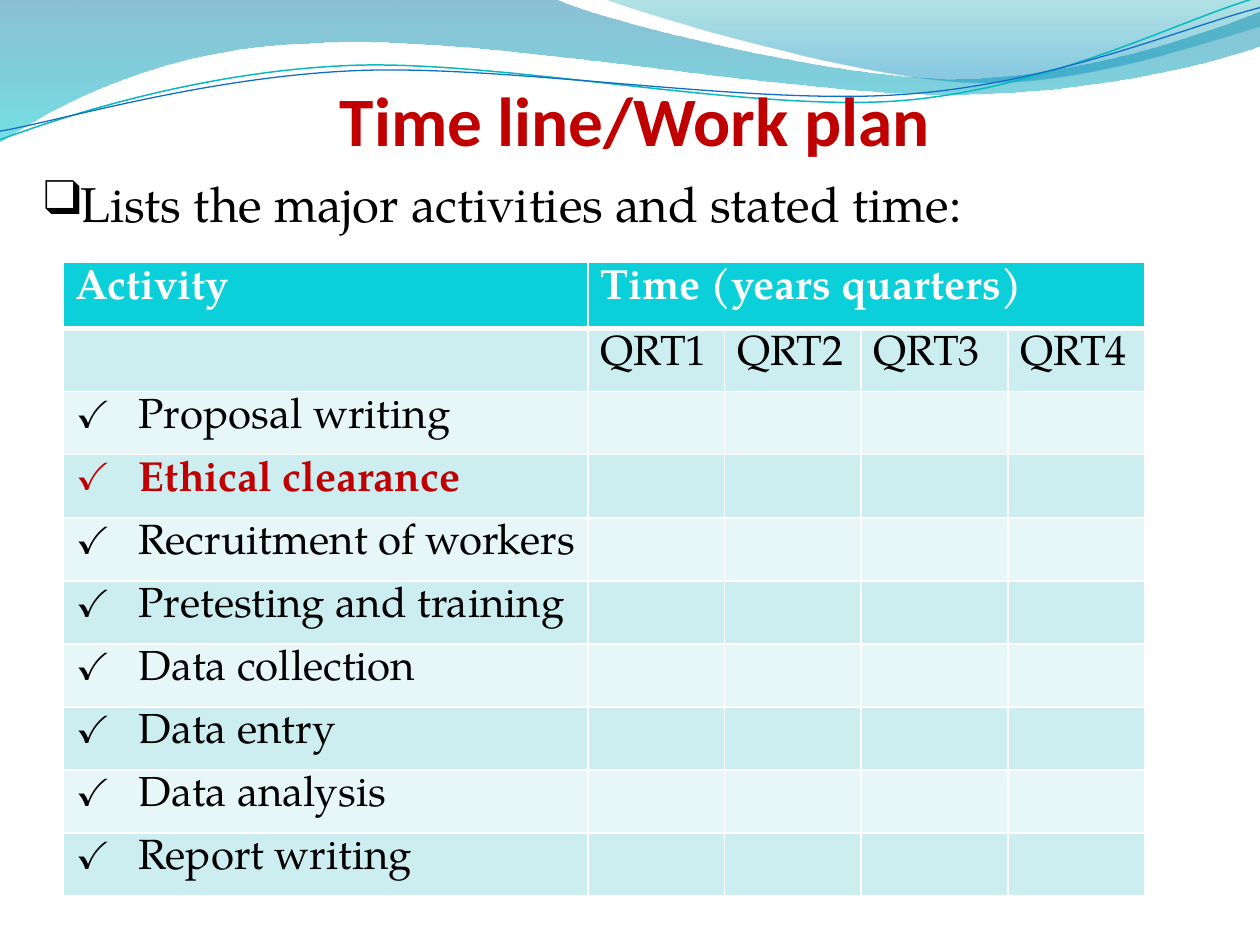
from lxml.etree import SubElement
from pptx import Presentation
from pptx.dml.color import RGBColor
from pptx.enum.text import MSO_ANCHOR, MSO_AUTO_SIZE, PP_ALIGN
from pptx.oxml import parse_xml
from pptx.oxml.ns import nsdecls, qn
from pptx.util import Pt

COLORS = {
    "title": "C00000", "text": "000000", "white": "FFFFFF",
    "header": "0BD0D9", "dark_band": "CCEEF1", "light_band": "E7F7F8",
    "teal_line": "0AB8BF", "blue_line": "0F6FC6",
    "wave_blue": "0074A1", "wave_cyan": "00C6CF",
    "crest_teal": "00A1A9", "crest_blue": "008BBF",
}
COLORS = {name: RGBColor.from_string(value) for name, value in COLORS.items()}
SERIF = "TeX Gyre Pagella"

WAVES = [
    {"start": (-0.5, -0.5),
     "steps": [(317, -0.7), (343, 12, 478, 45, 546, 45), (614, 45, 690, 19, 720, 6.5),
               (720.7, 26), (708, 32, 626, 55, 537, 54), (448, 54, 275, 20, 185, 24.5),
               (93, 26, 33, 60, -0.7, 81.4)],
     "stops": [(0, "wave_blue", 45), (1, "wave_cyan", 55)]},
    {"start": (345, -0.7),
     "steps": [(366, 8, 491, 44.6, 554, 46.8), (616, 49.7, 692, 23, 720, 15), (720, 0)],
     "stops": [(0, "crest_teal", 30), (0.8, "crest_blue", 45)]},
    {"start": (-1.4, 62.9),
     "steps": [(33.7, 51.7, 114, 29.4, 199.8, 29.9), (284.8, 30.3, 425.8, 67.2, 512.4, 64.9),
               (599, 62.4, 676.4, 25.7, 720.2, 15.6)],
     "line": ("teal_line", 0.85)},
    {"start": (-1.2, 58),
     "steps": [(33, 53.8, 118.3, 32.5, 204, 33), (290.5, 33.5, 428.9, 63.8, 515.5, 61.3),
               (601.3, 59.6, 678.5, 30.1, 721.4, 21.4)],
     "line": ("blue_line", 0.75)},
]


def draw_curve(shapes, start, steps, closed):
    points = [start] + [pair for step in steps for pair in zip(step[::2], step[1::2])]
    points = [(round(x * 100), round(y * 100)) for x, y in points]
    builder = shapes.build_freeform(*points[0], scale=Pt(0.01))
    builder.add_line_segments(points[1:], close=closed)
    shape = builder.convert_to_shape()
    segments = iter(list(shape._element.iter(qn("a:lnTo"))))
    for step in steps:
        first = next(segments)
        if len(step) == 6:
            first.tag = qn("a:cubicBezTo")
            for _ in range(2):
                segment = next(segments)
                first.append(segment[0])
                segment.getparent().remove(segment)
    return shape


def write(paragraph, text, format_values, color, bullet=None, indent=0):
    run = paragraph.add_run()
    run.text = text
    for name, value in format_values.items():
        setattr(run.font, name, value)
    run.font.color.rgb = COLORS[color]
    if bullet:
        properties = paragraph._p.get_or_add_pPr()
        properties.set("marL", str(Pt(indent)))
        properties.set("indent", str(-Pt(indent)))
        SubElement(properties, qn("a:buFont")).set("typeface", SERIF)
        SubElement(properties, qn("a:buChar")).set("char", bullet)


presentation = Presentation()
presentation.slide_width, presentation.slide_height = Pt(720), Pt(540)
slide = presentation.slides.add_slide(presentation.slide_layouts[5])

for wave in WAVES:
    shape = draw_curve(slide.shapes, wave["start"], wave["steps"], "stops" in wave)
    shape.shadow.inherit = False
    if "line" in wave:
        color, width = wave["line"]
        shape.rotation = 357.3
        shape.fill.background()
        shape.line.color.rgb = COLORS[color]
        shape.line.width = Pt(width)
        continue
    shape.line.fill.background()
    shape.fill.gradient()
    shape.fill.gradient_angle = 270
    for stop, (position, color, opacity) in zip(shape.fill.gradient_stops, wave["stops"]):
        stop.position = position
        stop.color.rgb = COLORS[color]
        color_element = stop._gs.find(qn("a:srgbClr"))
        SubElement(color_element, qn("a:alpha")).set("val", str(opacity * 1000))

title = slide.shapes.title
title_box = {"left": Pt(36), "top": Pt(55.4), "width": Pt(653.8), "height": Pt(90)}
title_frame = {"auto_size": MSO_AUTO_SIZE.NONE, "vertical_anchor": MSO_ANCHOR.BOTTOM,
               "margin_left": 0, "margin_right": 0, "margin_top": 0, "margin_bottom": Pt(54)}
for target, format_values in ((title, title_box), (title.text_frame, title_frame)):
    for name, value in format_values.items():
        setattr(target, name, value)
paragraph = title.text_frame.paragraphs[0]
paragraph.alignment = PP_ALIGN.CENTER
write(paragraph, "Time line/Work plan", {"size": Pt(39.6), "name": "Calibri", "bold": True}, "title")
slide.shapes._spTree.append(title._element)

intro = slide.shapes.add_textbox(Pt(18), Pt(95.8), Pt(671.8), Pt(414.7))
intro.text_frame.word_wrap = True
write(intro.text_frame.paragraphs[0], "Lists the major activities and stated time:",
      {"size": Pt(28), "name": SERIF}, "text", bullet="❑")

activities = ["Proposal writing", "Ethical clearance", "Recruitment of workers",
              "Pretesting and training", "Data collection", "Data entry",
              "Data analysis", "Report writing"]
rows = [["Activity", "Time (years quarters)"], ["", "QRT1", "QRT2", "QRT3", "QRT4"]]
rows += [[activity] for activity in activities]
column_widths = [300, 78, 78, 84, 78]
row_heights = [37.8] + [36] * (len(rows) - 1)

table = slide.shapes.add_table(len(rows), len(column_widths), Pt(36), Pt(150),
                               Pt(sum(column_widths)), Pt(sum(row_heights))).table
for column, width in zip(table.columns, column_widths):
    column.width = Pt(width)
for row, height in zip(table.rows, row_heights):
    row.height = Pt(height)
table.cell(0, 1).merge(table.cell(0, 4))

for row_index, texts in enumerate(rows):
    is_header = row_index == 0
    band = "header" if is_header else "dark_band" if row_index % 2 else "light_band"
    for column_index, cell in enumerate(table.rows[row_index].cells):
        cell.fill.solid()
        cell.fill.fore_color.rgb = COLORS[band]
        for position, side in enumerate(("lnL", "lnR", "lnT", "lnB")):
            thick = (is_header and side == "lnB") or (row_index == 1 and side == "lnT")
            cell._tc.get_or_add_tcPr().insert(position, parse_xml(
                f'<a:{side} {nsdecls("a")} w="{Pt(3 if thick else 1)}"><a:solidFill>'
                f'<a:srgbClr val="{COLORS["white"]}"/></a:solidFill></a:{side}>'))
        if column_index < len(texts) and texts[column_index]:
            text = texts[column_index]
            highlighted = text == "Ethical clearance"
            color = "white" if is_header else "title" if highlighted else "text"
            write(cell.text_frame.paragraphs[0], text,
                  {"size": Pt(24), "name": SERIF, "bold": is_header or highlighted}, color,
                  bullet="✓" if row_index > 1 else None, indent=36)

presentation.save("out.pptx")
